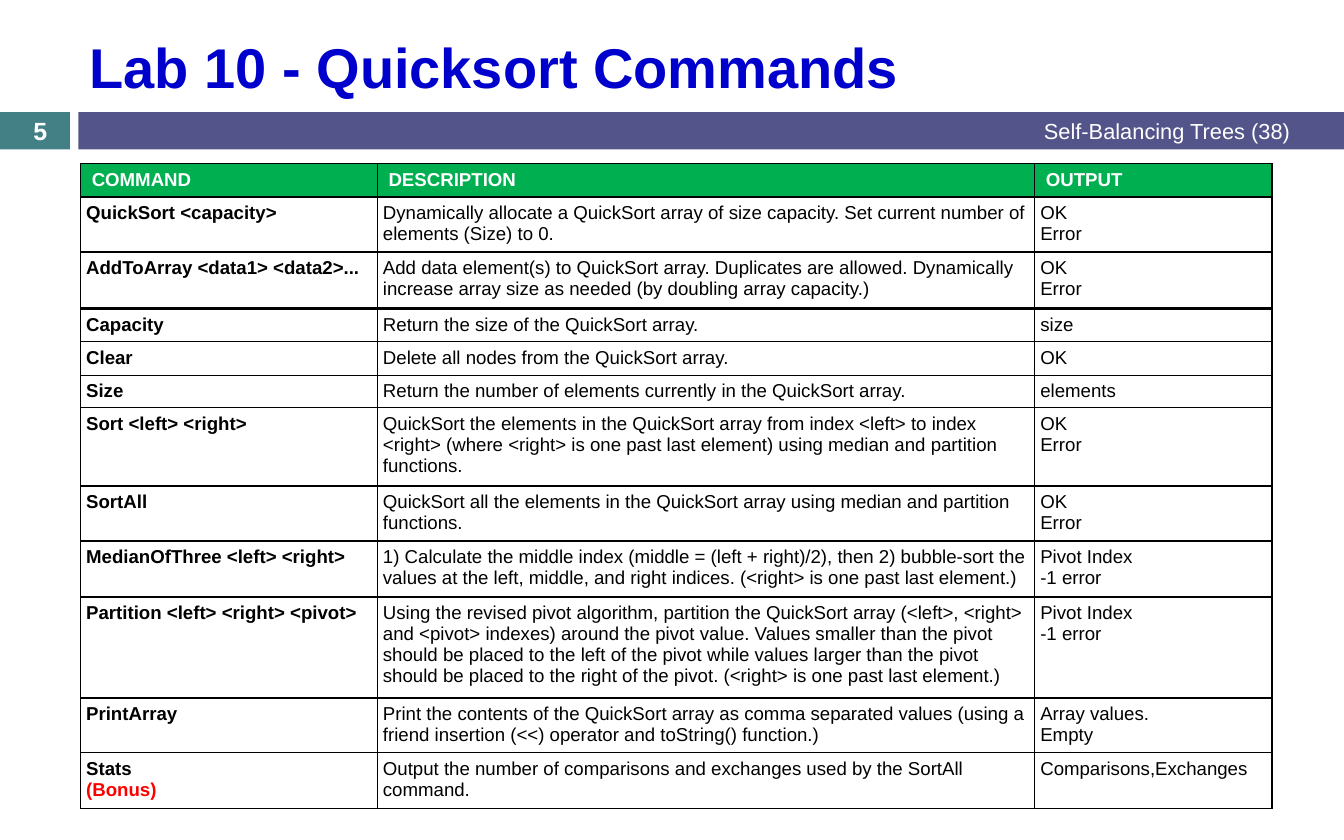
import dataclasses

import pptx
import pptx.dml.color
import pptx.enum.shapes
import pptx.enum.text
import pptx.oxml
import pptx.oxml.ns
import pptx.util

Pt = pptx.util.Pt
Align = pptx.enum.text.PP_ALIGN
MIDDLE = pptx.enum.text.MSO_ANCHOR.MIDDLE
TOP = pptx.enum.text.MSO_ANCHOR.TOP


@dataclasses.dataclass
class Theme:
    font: str = "Arial"
    white: str = "FFFFFF"
    black: str = "000000"
    red: str = "FF0000"
    blue: str = "0000CC"
    green: str = "00B050"
    teal: str = "438086"
    violet: str = "53548A"
    title: int = 36
    number: int = 16
    course: int = 14
    body: int = 12


LEFT = 51.8
COLS = (190.8, 422.6, 152.6)
HEAD = ("COMMAND", "DESCRIPTION", "OUTPUT")
# Top, number of text lines, then the text of the three cells.
ROWS = (
    (162, 2, "AddToArray <data1> <data2>...",
     "Add data element(s) to QuickSort array. Duplicates are allowed. "
     "Dynamically increase array size as needed (by doubling array capacity.)",
     "OK\nError"),
    (198.7, 1, "Capacity", "Return the size of the QuickSort array.", "size"),
    (219.6, 1, "Clear", "Delete all nodes from the QuickSort array.", "OK"),
    (241.2, 1, "Size",
     "Return the number of elements currently in the QuickSort array.",
     "elements"),
    (262.1, 3, "Sort <left> <right>",
     "QuickSort the elements in the QuickSort array from index <left> to index "
     "<right> (where <right> is one past last element) using median and "
     "partition functions.", "OK\nError"),
    (312.5, 2, "SortAll",
     "QuickSort all the elements in the QuickSort array using median and "
     "partition functions.", "OK\nError"),
    (347.8, 2, "MedianOfThree <left> <right>",
     "1) Calculate the middle index (middle = (left + right)/2), then 2) "
     "bubble-sort the values at the left, middle, and right indices. "
     "(<right> is one past last element.)", "Pivot Index\n-1 error"),
    (383.8, 4, "Partition <left> <right> <pivot>",
     "Using the revised pivot algorithm, partition the QuickSort array "
     "(<left>, <right> and <pivot> indexes) around the pivot value. Values "
     "smaller than the pivot should be placed to the left of the pivot while "
     "values larger than the pivot should be placed to the right of the pivot. "
     "(<right> is one past last element.)", "Pivot Index\n-1 error"),
    (448.6, 2, "PrintArray",
     "Print the contents of the QuickSort array as comma separated values "
     "(using a friend insertion (<<) operator and toString() function.)",
     "Array values.\nEmpty"),
    (483.8, 2, "Stats\n(Bonus)",
     "Output the number of comparisons and exchanges used by the SortAll "
     "command.", "Comparisons,Exchanges"),
)
FIRST = (2, "QuickSort <capacity>",
         "Dynamically allocate a QuickSort array of size capacity. Set current "
         "number of elements (Size) to 0.", "OK\nError")


class Painter:
    def __init__(self, slide, theme):
        self.slide = slide
        self.theme = theme

    def put(self, frame, text, size, color, bold=False, align=Align.LEFT):
        frame.text = text
        for par in frame.paragraphs:
            par.alignment = align
            for run in par.runs:
                font = run.font
                font.name = self.theme.font
                font.size = Pt(size)
                font.bold = bold
                font.color.rgb = pptx.dml.color.RGBColor.from_string(color)

    def fill(self, item, color):
        item.fill.solid()
        item.fill.fore_color.rgb = pptx.dml.color.RGBColor.from_string(color)

    def title(self, text, *box):
        shape = self.slide.shapes.title
        shape.left, shape.top, shape.width, shape.height = map(Pt, box)
        shape.text_frame.vertical_anchor = MIDDLE
        self.put(shape.text_frame, text, self.theme.title, self.theme.blue, True)

    def bar(self, color, *box):
        kind = pptx.enum.shapes.MSO_SHAPE.RECTANGLE
        shape = self.slide.shapes.add_shape(kind, *map(Pt, box))
        shape.shadow.inherit = False
        shape.line.fill.background()
        self.fill(shape, color)

    def label(self, text, size, align, bold, *box):
        frame = self.slide.shapes.add_textbox(*map(Pt, box)).text_frame
        frame.word_wrap = True
        frame.vertical_anchor = MIDDLE
        self.put(frame, text, size, self.theme.white, bold, align)

    def border(self, cell):
        props = cell._tc.get_or_add_tcPr()
        for side in ("lnL", "lnR", "lnT", "lnB"):
            props.append(pptx.oxml.parse_xml(
                f'<a:{side} {pptx.oxml.ns.nsdecls("a")} w="{Pt(1)}"><a:solidFill>'
                f'<a:srgbClr val="{self.theme.black}"/></a:solidFill></a:{side}>'))

    def cell(self, cell, text, head, bold):
        look = self.theme
        self.border(cell)
        self.fill(cell, look.green if head else look.white)
        cell.vertical_anchor = MIDDLE if head else TOP
        cell.margin_left = cell.margin_right = Pt(7.2 if head else 3.6)
        cell.margin_top = cell.margin_bottom = Pt(3.6)
        self.put(cell.text_frame, text, look.body,
                 look.white if head else look.black, bold)

    def table(self, top, rows, head=False):
        """Each row is its number of text lines, then its cell texts."""
        high = sum(14.4 * row[0] + 7.2 for row in rows)
        frame = self.slide.shapes.add_table(
            len(rows), len(COLS), Pt(LEFT), Pt(top), Pt(sum(COLS)), Pt(high))
        grid = frame.table
        for col, width in zip(grid.columns, COLS):
            col.width = Pt(width)
        for r, (lines, *texts) in enumerate(rows):
            grid.rows[r].height = Pt(13.3 * lines + 7.2)
            for c, text in enumerate(texts):
                top_row = head and r == 0
                self.cell(grid.cell(r, c), text, top_row, top_row or c == 0)
        frame.height = Pt(high)
        return grid


def main():
    deck = pptx.Presentation()
    deck.slide_width, deck.slide_height = Pt(864), Pt(540)
    look = Theme()
    pen = Painter(deck.slides.add_slide(deck.slide_layouts[5]), look)

    pen.bar(look.teal, 0, 72, 45, 24)
    pen.bar(look.violet, 50.4, 72, 813.6, 24)
    pen.title("Lab 10 - Quicksort Commands", 50.4, 13.7, 785.5, 57.6)
    pen.label("Self-Balancing Trees (38)", look.course, Align.RIGHT, False,
              444.2, 72, 392.4, 24)
    pen.label("5", look.number, Align.CENTER, True, 0, 73, 51.8, 21.6)

    pen.table(105.1, [(1, *HEAD), FIRST], head=True)
    for top, *row in ROWS:
        grid = pen.table(top, [row])
    bonus = grid.cell(0, 0).text_frame.paragraphs[1].runs[0]
    bonus.font.color.rgb = pptx.dml.color.RGBColor.from_string(look.red)

    deck.save("out.pptx")


if __name__ == "__main__":
    main()
